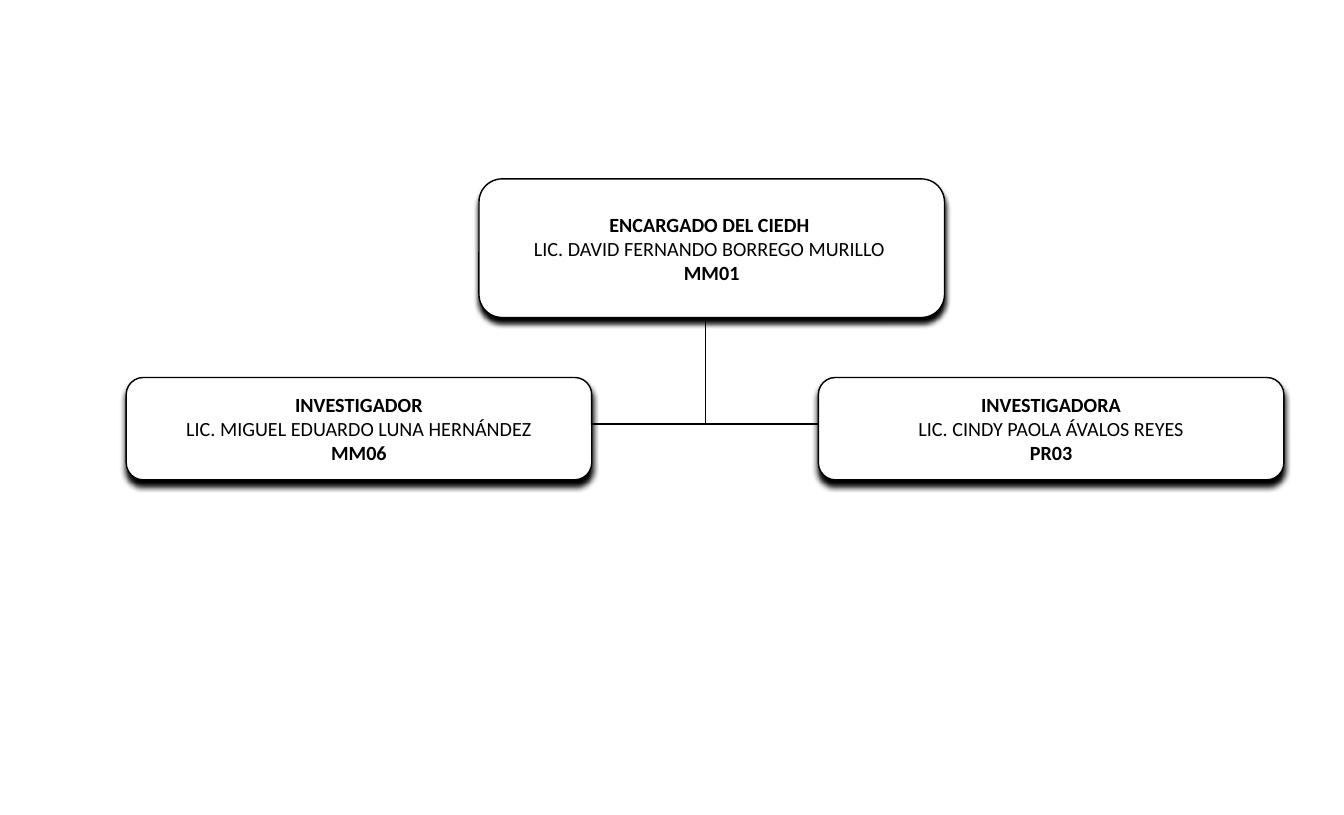
from lxml import etree
from pptx import Presentation
from pptx.dml.color import RGBColor
from pptx.enum.shapes import MSO_CONNECTOR, MSO_SHAPE
from pptx.enum.text import MSO_ANCHOR, PP_ALIGN
from pptx.oxml.ns import qn
from pptx.util import Inches, Pt

STRAIGHT = MSO_CONNECTOR.STRAIGHT
ROUNDED = MSO_SHAPE.ROUNDED_RECTANGLE
MIDDLE = MSO_ANCHOR.MIDDLE
CENTER = PP_ALIGN.CENTER

WIDTH, HEIGHT = 12.99, 7.88
BLACK, WHITE = "000000", "FFFFFF"
FONT = "Calibri"

BOX_WIDTH = 34.64
HEAD_LEFT, HEAD_TOP, HEAD_HEIGHT = 35.64, 21.95, 17.01
STAFF_TOP, STAFF_HEIGHT = 46.32, 12.56
STAFF = [
    (9.39, ("INVESTIGADOR", "LIC. MIGUEL EDUARDO LUNA HERNÁNDEZ", "MM06")),
    (60.89, ("INVESTIGADORA", "LIC. CINDY PAOLA ÁVALOS REYES", "PR03")),
]
HEAD = ("ENCARGADO DEL CIEDH ", "LIC. DAVID FERNANDO BORREGO MURILLO ", "MM01")
TRUNK_X, TRUNK_TOP, BRANCH_Y = 52.5, 36.04, 52.03


def color(value):
    """Return the colour for a hex string."""
    return RGBColor.from_string(value)


def across(percent):
    """Return a share of the slide's width."""
    return Inches(WIDTH * percent / 100)


def down(percent):
    """Return a share of the slide's height."""
    return Inches(HEIGHT * percent / 100)


def add_line(page, start_x, start_y, end_x, end_y):
    """Draw a thin black line without a shadow."""
    line = page.shapes.add_connector(
        STRAIGHT, across(start_x), down(start_y), across(end_x), down(end_y))
    line.line.color.rgb = color(BLACK)
    line.line.width = Pt(0.75)
    etree.SubElement(line.element.spPr, qn("a:effectLst"))


def add_shadow(box):
    """Cast a solid black shadow straight down from a box."""
    box.shadow.inherit = False
    effects = box.element.spPr.find(qn("a:effectLst"))
    shadow = etree.SubElement(
        effects, qn("a:outerShdw"), blurRad=str(Pt(4)), dist=str(Pt(4)),
        dir="5400000", rotWithShape="0")
    etree.SubElement(shadow, qn("a:srgbClr"), val=BLACK)


def add_position(page, left, top, height, lines):
    """Draw a box with the post, the person's name and the pay code."""
    box = page.shapes.add_shape(
        ROUNDED, across(left), down(top), across(BOX_WIDTH), down(height))
    box.fill.solid()
    box.fill.fore_color.rgb = color(WHITE)
    box.line.color.rgb = color(BLACK)
    box.line.width = Pt(1)
    add_shadow(box)
    frame = box.text_frame
    frame.word_wrap = False
    frame.vertical_anchor = MIDDLE
    frame.margin_left = frame.margin_right = Inches(0.17)
    frame.margin_top = frame.margin_bottom = Inches(0.09)
    for index, text in enumerate(lines):
        para = frame.add_paragraph() if index else frame.paragraphs[0]
        para.alignment = CENTER
        span = para.add_run()
        span.text = text
        span.font.name = FONT
        span.font.size = Pt(14)
        span.font.bold = index != 1
        span.font.color.rgb = color(BLACK)


def main():
    """Build the organisation chart and save it."""
    deck = Presentation()
    deck.slide_width, deck.slide_height = Inches(WIDTH), Inches(HEIGHT)
    page = deck.slides.add_slide(deck.slide_layouts[6])
    add_line(page, TRUNK_X, TRUNK_TOP, TRUNK_X, BRANCH_Y)
    add_line(page, STAFF[0][0] + BOX_WIDTH, BRANCH_Y, STAFF[1][0], BRANCH_Y)
    for left, lines in STAFF:
        add_position(page, left, STAFF_TOP, STAFF_HEIGHT, lines)
    add_position(page, HEAD_LEFT, HEAD_TOP, HEAD_HEIGHT, HEAD)
    deck.save("out.pptx")


if __name__ == "__main__":
    main()
